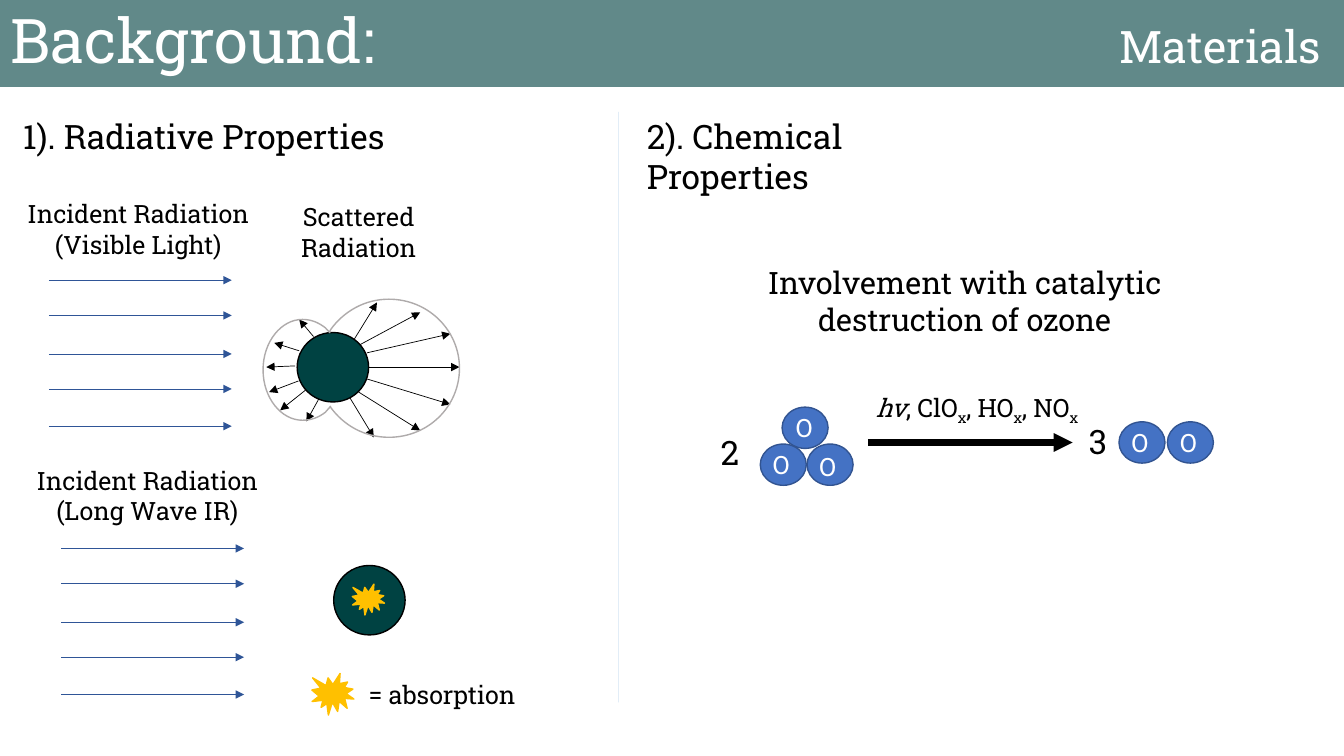
from dataclasses import dataclass

from pptx import Presentation
from pptx import util as u
from pptx.dml.color import RGBColor
from pptx.enum import dml, shapes, text
from pptx.oxml import ns, xmlchemy


@dataclass(frozen=True)
class Theme:
    font: str = "Roboto Slab"
    teal: str = "004242"
    black: str = "000000"
    white: str = "FFFFFF"
    beam: str = "2F5597"
    lobe: str = "AFABAB"
    gold: str = "FFC000"
    atom: str = "4472C4"
    atom_edge: str = "325491"
    divider: str = "9DC3E6"
    title: int = 44
    subtitle: int = 32
    heading: int = 24
    statement: int = 22
    body: int = 18


theme = Theme()
LEFT, CENTER = text.PP_ALIGN.LEFT, text.PP_ALIGN.CENTER

presentation = Presentation()
presentation.slide_width, presentation.slide_height = u.Cm(33.87), u.Cm(19.05)
slide = presentation.slides.add_slide(presentation.slide_layouts[6])


def write(shape, pieces, sizes, color, align):
    """Fill a shape with one paragraph, one run per piece."""
    shape.text_frame.word_wrap = True
    paragraph = shape.text_frame.paragraphs[0]
    paragraph.alignment = align
    for piece, size in zip(pieces, sizes):
        run = paragraph.add_run()
        run.text = piece
        run.font.name = theme.font
        run.font.size = u.Pt(size)
        run.font.color.rgb = RGBColor.from_string(color)
    return paragraph


def draw_line(x1, y1, x2, y2, color, width=0.5, arrow=True):
    line = slide.shapes.add_connector(
        shapes.MSO_CONNECTOR.STRAIGHT, u.Cm(x1), u.Cm(y1), u.Cm(x2), u.Cm(y2))
    line.line.color.rgb = RGBColor.from_string(color)
    line.line.width = u.Pt(width)
    line.line.dash_style = dml.MSO_LINE.SOLID
    if arrow:
        tail = xmlchemy.OxmlElement("a:tailEnd")
        tail.set("type", "triangle")
        line.line._get_or_add_ln().append(tail)
    line._element.spPr.append(xmlchemy.OxmlElement("a:effectLst"))
    return line


# Title banner, with the section name at a right tab stop
banner = slide.shapes.add_shape(
    shapes.MSO_SHAPE.RECTANGLE, 0, 0, presentation.slide_width, u.Cm(2.19))
banner.shadow.inherit = False
banner.fill.solid()
banner.fill.fore_color.rgb = RGBColor.from_string(theme.teal)
banner.line.fill.background()
banner.text_frame.margin_left = u.Cm(0.27)
banner_text = write(banner, ["Background:\t", "Materials"],
                    [theme.title, theme.subtitle], theme.white, LEFT)
banner_text.line_spacing = 0.9
tab_list = xmlchemy.OxmlElement("a:tabLst")
tab = xmlchemy.OxmlElement("a:tab")
tab.set("pos", str(u.Cm(33.03)))
tab.set("algn", "r")
tab_list.append(tab)
banner_text._p.get_or_add_pPr().append(tab_list)

# Divider between the two halves
divider = draw_line(15.59, 2.82, 15.59, 17.7, theme.divider, arrow=False)

# Banner and divider are partly transparent
for part, opacity in ((banner, 62), (divider, 44)):
    alpha = xmlchemy.OxmlElement("a:alpha")
    alpha.set("val", str(opacity * 1000))
    part._element.spPr.find(".//" + ns.qn("a:srgbClr")).append(alpha)

# Incident beams: visible light above, long wave below
for left, top in ((1.23, 7.06), (1.54, 13.82)):
    for drop in (0, 0.89, 1.86, 2.74, 3.68):
        draw_line(left, top + drop, left + 4.61, top + drop, theme.beam)

# Scattered rays
for ray in (
    (8.97, 8.74, 10.59, 7.87),
    (9.3, 9.25, 11.58, 9.25),
    (9.25, 8.89, 11.35, 8.41),
    (9.25, 9.55, 11.35, 10.19),
    (9.04, 9.88, 10.59, 10.85),
    (8.81, 10.01, 9.42, 11.02),
    (8.92, 8.56, 9.5, 7.62),
    (7.9, 8.48, 7.54, 8.05),
    (8.03, 10.06, 7.72, 10.62),
    (7.7, 9.83, 7.06, 10.34),
    (7.52, 9.6, 6.78, 9.88),
    (7.44, 9.22, 6.71, 9.25),
    (7.54, 8.84, 6.91, 8.64),
):
    draw_line(*ray, theme.black)

# Particles, absorption bursts and oxygen atoms
OVAL, BURST = shapes.MSO_SHAPE.OVAL, shapes.MSO_SHAPE.EXPLOSION1
particle = (OVAL, 1.8, 1.75, theme.teal, theme.black)
atom = (OVAL, 1.16, 1.04, theme.atom, theme.atom_edge)
for left, top, (kind, width, height, fill, edge) in (
    (7.49, 8.38, particle),
    (8.41, 14.25, particle),
    (8.88, 14.72, (BURST, 0.81, 0.78, theme.gold, theme.gold)),
    (7.86, 16.97, (BURST, 1.06, 1.05, theme.gold, theme.gold)),
    (20.34, 11.19, atom),
    (19.71, 10.26, atom),
    (19.16, 11.19, atom),
    (28.2, 10.63, atom),
    (29.42, 10.63, atom),
):
    shape = slide.shapes.add_shape(
        kind, u.Cm(left), u.Cm(top), u.Cm(width), u.Cm(height))
    shape.shadow.inherit = False
    shape.fill.solid()
    shape.fill.fore_color.rgb = RGBColor.from_string(fill)
    shape.line.color.rgb = RGBColor.from_string(edge)
    shape.line.width = u.Pt(1)

# Scattering outline: one point is a straight step, three are a curve
steps = (
    ((10.8, 7.54), (11.58, 8.33), (11.58, 9.28)),
    ((11.58, 10.24), (10.8, 11.02), (9.8, 11.02)),
    ((9.19, 11.02), (8.66, 10.72), (8.33, 10.26)),
    ((8.33, 10.24),),
    ((8.2, 10.39),),
    ((8.03, 10.52), (7.85, 10.59), (7.62, 10.59)),
    ((7.09, 10.59), (6.63, 10.03), (6.63, 9.32)),
    ((6.63, 8.61), (7.09, 8.05), (7.62, 8.05)),
    ((7.85, 8.05), (8.03, 8.13), (8.2, 8.26)),
    ((8.31, 8.38),),
    ((8.33, 8.31),),
    ((8.66, 7.85), (9.19, 7.54), (9.8, 7.54)),
)
builder = slide.shapes.build_freeform(u.Cm(9.8), u.Cm(7.54))
builder.add_line_segments(
    [(u.Cm(x), u.Cm(y)) for step in steps for x, y in step], close=True)
lobes = builder.convert_to_shape()
segments = iter(list(lobes._element.iter(ns.qn("a:lnTo"))))
for step in steps:
    group = [next(segments) for point in step]
    if len(group) == 3:
        curve = xmlchemy.OxmlElement("a:cubicBezTo")
        group[0].addprevious(curve)
        for segment in group:
            curve.append(segment[0])
            segment.getparent().remove(segment)
lobes.shadow.inherit = False
lobes.fill.background()
lobes.line.color.rgb = RGBColor.from_string(theme.lobe)
lobes.line.width = u.Pt(1)

# Reaction arrow
draw_line(21.87, 11.15, 27.03, 11.15, theme.black, width=4.5)

# Headings, captions and reaction text
formula = ["hv", ", ClO", "x", ", HO", "x", ", NO", "x"]
labels = [
    (0.33, 2.79, 12.73, 1.27, theme.heading, LEFT, ["1). Radiative Properties"]),
    (0.07, 4.88, 6.83, 1.8, theme.body, CENTER, ["Incident Radiation (Visible Light)"]),
    (7.16, 4.96, 3.76, 1.8, theme.body, CENTER, ["Scattered Radiation"]),
    (0.3, 11.6, 6.83, 1.8, theme.body, CENTER, ["Incident Radiation (Long Wave IR)"]),
    (9.04, 16.99, 4.52, 1.02, theme.body, LEFT, ["= absorption"]),
    (16.05, 2.79, 9.73, 1.27, theme.heading, LEFT, ["2). Chemical Properties"]),
    (18.47, 6.53, 11.68, 2.13, theme.statement, CENTER,
     ["Involvement with catalytic destruction of ozone"]),
    (17.91, 10.77, 1.04, 1.27, theme.heading, LEFT, ["2"]),
    (27.19, 10.47, 1.04, 1.27, theme.heading, LEFT, ["3"]),
    (21.83, 9.75, 6.27, 1.02, theme.body, LEFT, formula),
]
for left, top in ((19.23, 11.2), (20.4, 11.25), (19.81, 10.26),
                  (28.27, 10.64), (29.49, 10.64)):
    labels.append((left, top, 1.04, 1.02, theme.body, LEFT, ["O"]))
for left, top, width, height, size, align, pieces in labels:
    label = slide.shapes.add_textbox(
        u.Cm(left), u.Cm(top), u.Cm(width), u.Cm(height))
    color = theme.white if pieces == ["O"] else theme.black
    paragraph = write(label, pieces, [size] * len(pieces), color, align)
    for run in paragraph.runs:
        if run.text == "hv":
            run.font.italic = True
        elif run.text == "x":
            run.font._element.set("baseline", "-25000")

presentation.save("out.pptx")
